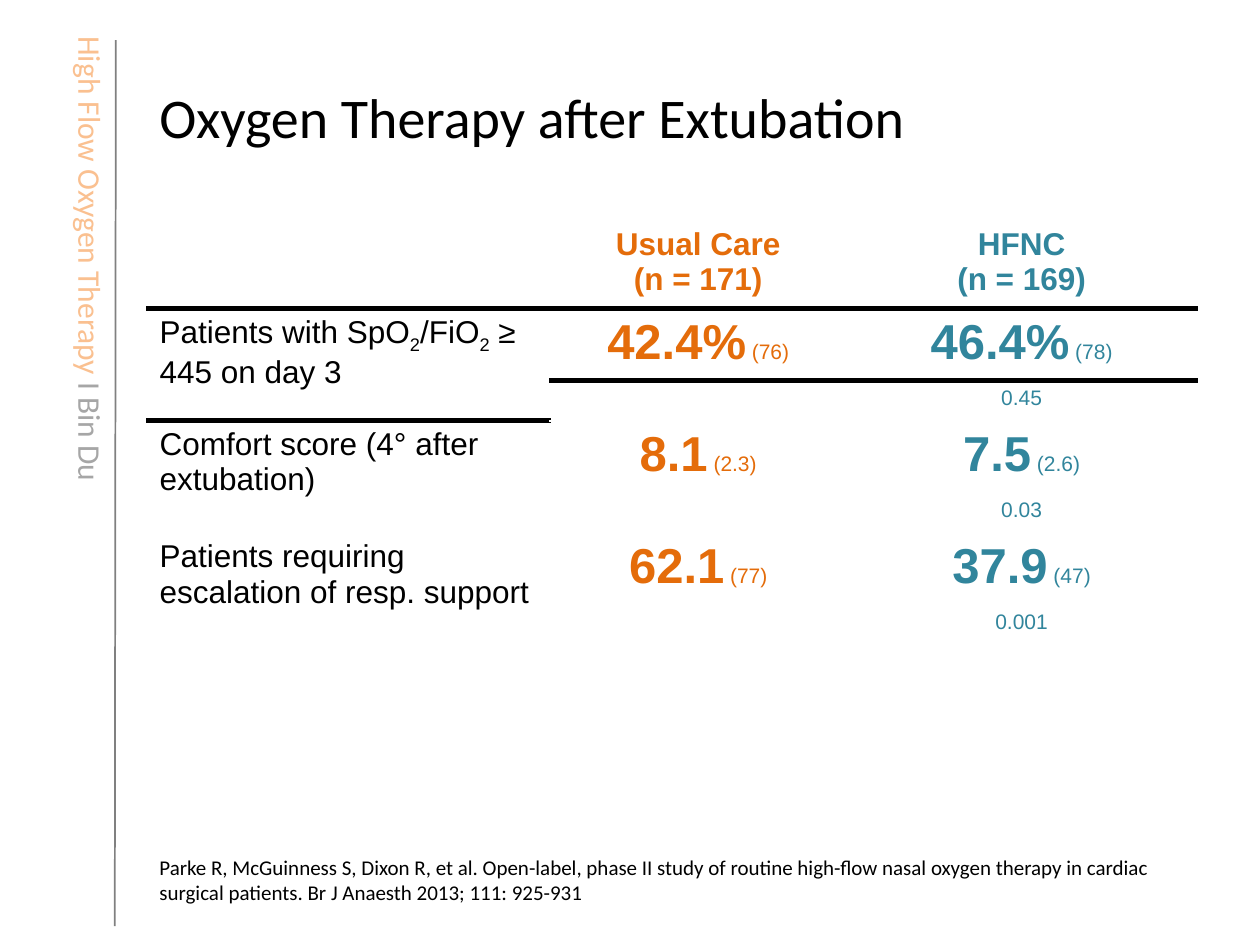
from dataclasses import dataclass

from lxml import etree
from pptx import Presentation
from pptx.dml.color import RGBColor
from pptx.enum import shapes, text
from pptx.oxml import ns
from pptx.util import Pt


@dataclass(frozen=True)
class Theme:
    heading_font: str = "Calibri"
    table_font: str = "Arial"
    black: str = "000000"
    usual: str = "E46C0A"
    hfnc: str = "31859C"
    topic: str = "FAC090"
    author: str = "A6A6A6"
    rule: str = "808080"
    title: int = 32
    value: int = 28
    body: int = 18
    small: int = 12


THEME = Theme()
LEFT, WIDTH = 84, 600
COLUMNS = (230.4, 169.2, 200.4)
HEADER_HEIGHT, VALUE_HEIGHT, P_HEIGHT = 50.4, 39.4, 23.2

# Label pieces (every second one is a subscript), usual care, HFNC, p value
OUTCOMES = [
    (("Patients with SpO", "2", "/FiO", "2", " ≥ 445 on day 3"),
     ("42.4%", "(76)"), ("46.4%", "(78)"), "0.45"),
    (("Comfort score (4° after extubation)",),
     ("8.1", "(2.3)"), ("7.5", "(2.6)"), "0.03"),
    (("Patients requiring escalation of resp. support",),
     ("62.1", "(77)"), ("37.9", "(47)"), "0.001"),
]


def style(font, name, size, color, bold=False):
    font.name, font.size, font.bold = name, Pt(size), bold
    font.color.rgb = RGBColor.from_string(color)


def add_run(para, words):
    span = para.add_run()
    span.text = words
    return span


def add_box(page, left, top, width, height, wrap=True):
    box = page.shapes.add_textbox(Pt(left), Pt(top), Pt(width), Pt(height))
    box.text_frame.word_wrap = wrap
    return box


def add_paragraph_box(page, top, height, words, size, anchor):
    box = add_box(page, LEFT, top, WIDTH, height)
    box.text_frame.vertical_anchor = anchor
    para = box.text_frame.paragraphs[0]
    add_run(para, words)
    style(para.font, THEME.heading_font, size, THEME.black)


def add_side_rule(page):
    rule = page.shapes.add_connector(
        shapes.MSO_CONNECTOR.STRAIGHT, Pt(66.2), Pt(23), Pt(65.6), Pt(529.2))
    rule.line.color.rgb = RGBColor.from_string(THEME.rule)
    rule.line.width = Pt(1)
    etree.SubElement(rule._element.spPr, ns.qn("a:effectLst"))


def add_side_label(page):
    box = add_box(page, -84.2, 135.4, 272.2, 28.8, wrap=False)
    box.rotation = 90
    box.text_frame.auto_size = text.MSO_AUTO_SIZE.SHAPE_TO_FIT_TEXT
    para = box.text_frame.paragraphs[0]
    for words, color in (("High Flow Oxygen Therapy ", THEME.topic),
                         ("Ι Bin Du", THEME.author)):
        style(add_run(para, words).font, THEME.heading_font, THEME.body, color)


def set_border(cell, side):
    """Draw a solid 3 pt border on the "T" or "B" side of a cell."""
    line = etree.Element(ns.qn(f"a:ln{side}"), w=str(Pt(3)))
    fill = etree.SubElement(line, ns.qn("a:solidFill"))
    etree.SubElement(fill, ns.qn("a:srgbClr"), val=THEME.black)
    cell._tc.get_or_add_tcPr().insert(0, line)


def fill_centered(cell, lines, size, color, bold=False):
    frame = cell.text_frame
    for index, words in enumerate(lines):
        para = frame.add_paragraph() if index else frame.paragraphs[0]
        para.alignment = text.PP_ALIGN.CENTER
        add_run(para, words)
        style(para.font, THEME.table_font, size, color, bold)


def fill_label(cell, pieces):
    para = cell.text_frame.paragraphs[0]
    style(para.font, THEME.table_font, THEME.body, THEME.black)
    for index, words in enumerate(pieces):
        span = add_run(para, words)
        if index % 2:
            span.font._element.set("baseline", "-25000")


def fill_value(cell, value, detail, color):
    para = cell.text_frame.paragraphs[0]
    para.alignment = text.PP_ALIGN.CENTER
    style(add_run(para, value).font, THEME.table_font, THEME.value, color, True)
    style(add_run(para, f" {detail}").font, THEME.table_font, THEME.small, color)


def add_outcome_table(page):
    heights = [HEADER_HEIGHT] + [VALUE_HEIGHT, P_HEIGHT] * len(OUTCOMES)
    frame = page.shapes.add_table(len(heights), len(COLUMNS), Pt(LEFT), Pt(126),
                                  Pt(WIDTH), Pt(sum(heights)))
    table = frame.table
    table.first_row = table.horz_banding = False
    for column, width in zip(table.columns, COLUMNS):
        column.width = Pt(width)
    for row, height in zip(table.rows, heights):
        row.height = Pt(height)
    for cell in table.iter_cells():
        cell.fill.background()

    # Header and the rule under it
    fill_centered(table.cell(0, 1), ("Usual Care", "(n = 171)"),
                  THEME.body, THEME.usual, True)
    fill_centered(table.cell(0, 2), ("HFNC", "(n = 169)"),
                  THEME.body, THEME.hfnc, True)
    for column in range(len(COLUMNS)):
        set_border(table.cell(0, column), "B")
        set_border(table.cell(1, column), "T")

    # Each outcome takes a value row and a p value row
    for index, (label, usual, hfnc, p_value) in enumerate(OUTCOMES):
        row = 1 + 2 * index
        table.cell(row, 0).merge(table.cell(row + 1, 0))
        fill_label(table.cell(row, 0), label)
        fill_value(table.cell(row, 1), *usual, THEME.usual)
        fill_value(table.cell(row, 2), *hfnc, THEME.hfnc)
        fill_centered(table.cell(row + 1, 2), (p_value,), THEME.small, THEME.hfnc)
        for column in (0, 1):
            empty = table.cell(row + 1, column).text_frame.paragraphs[0]
            etree.SubElement(empty._p, ns.qn("a:endParaRPr"),
                             sz=str(THEME.small * 100))


def main():
    deck = Presentation()
    deck.slide_width, deck.slide_height = Pt(720), Pt(540)
    page = deck.slides.add_slide(deck.slide_layouts[6])

    # Side strip
    add_side_rule(page)
    add_side_label(page)

    # Title, citation and results
    add_paragraph_box(page, 21.6, 90, "Oxygen Therapy after Extubation",
                      THEME.title, text.MSO_ANCHOR.MIDDLE)
    add_paragraph_box(
        page, 484.6, 36,
        "Parke R, McGuinness S, Dixon R, et al. Open-label, phase II study of "
        "routine high-flow nasal oxygen therapy in cardiac surgical patients. "
        "Br J Anaesth 2013; 111: 925-931", THEME.small, text.MSO_ANCHOR.TOP)
    add_outcome_table(page)

    deck.save("out.pptx")


if __name__ == "__main__":
    main()
